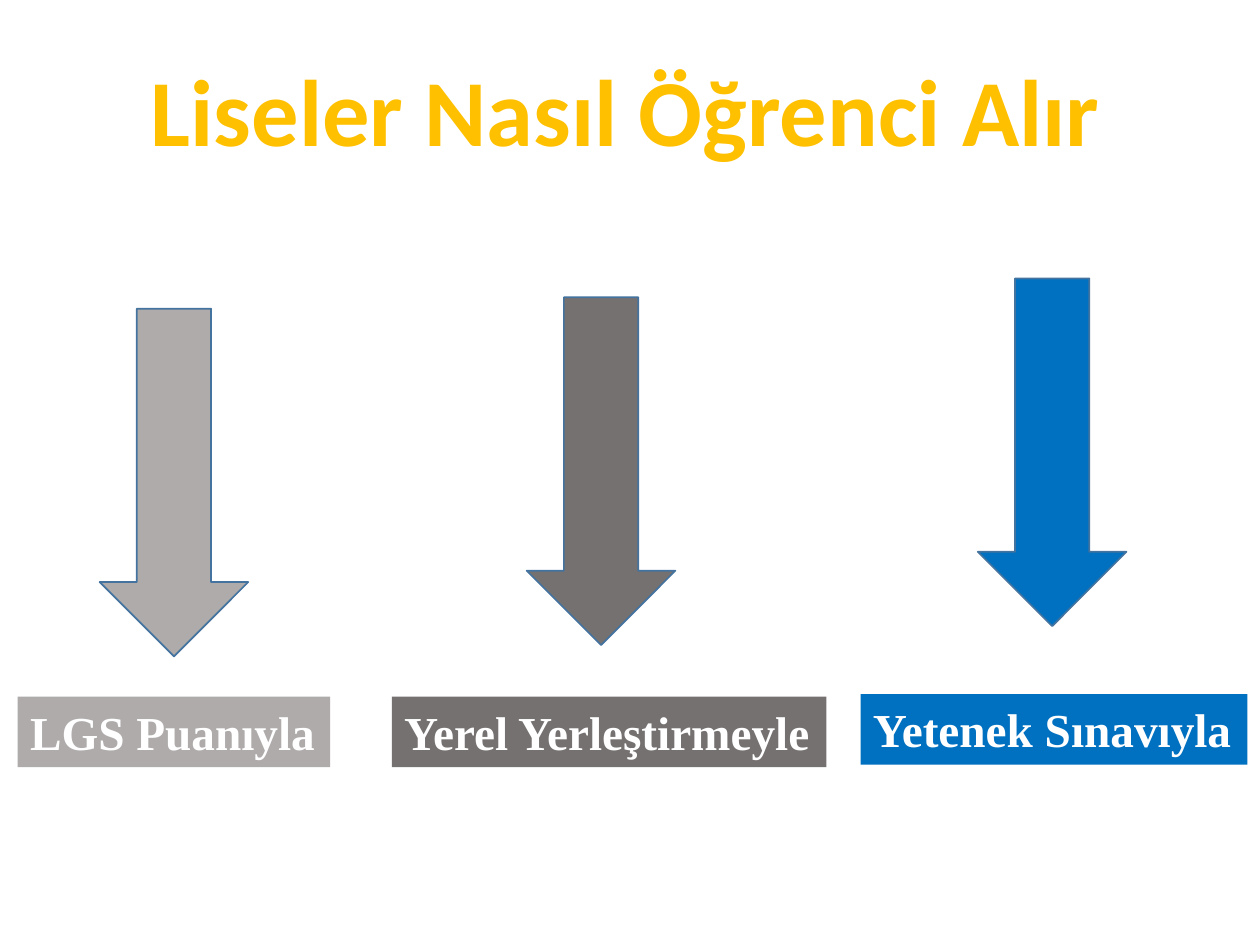
from pptx import Presentation
from pptx.dml.color import RGBColor
from pptx.enum.shapes import MSO_SHAPE as Shape
from pptx.enum.text import MSO_ANCHOR as Anchor, MSO_AUTO_SIZE as AutoSize, PP_ALIGN as Align
from pptx.util import Inches, Pt

TITLE = "Liseler Nasıl Öğrenci Alır"
ROUTES = [
    {"label": "LGS Puanıyla", "color": "light",
     "arrow": (0, 3.24), "box": (0.14, 5.53, 2.48)},
    {"label": "Yerel Yerleştirmeyle", "color": "dark",
     "arrow": (3.39, 3.15), "box": (3.11, 5.53, 3.45)},
    {"label": "Yetenek Sınavıyla", "color": "blue",
     "arrow": (6.97, 3), "box": (6.83, 5.51, 3.07)},
]
ARROW_SIZE = (2.76, 1.18)
BOX_HEIGHT = 0.56
THEME = {
    "title": "FFC000", "light": "AFABAB", "dark": "767171", "blue": "0070C0",
    "outline": "43739E", "label": "FFFFFF",
    "title_font": "Calibri", "label_font": "Times New Roman",
    "title_size": 54, "label_size": 27,
}


def color(name):
    return RGBColor.from_string(THEME[name])


def write(frame, text, role, align):
    frame.text = text
    para = frame.paragraphs[0]
    para.alignment = align
    font = para.runs[0].font
    font.name = THEME[role + "_font"]
    font.size = Pt(THEME[role + "_size"])
    font.bold = True
    font.color.rgb = color(role)
    return para


def add_title(page):
    title = page.shapes.title
    title.left, title.top, title.width, title.height = map(Inches, (0.34, 0.36, 9.13, 1.65))
    frame = title.text_frame
    frame.word_wrap = True
    frame.auto_size = AutoSize.NONE
    frame.vertical_anchor = Anchor.TOP
    para = write(frame, TITLE, "title", Align.CENTER)
    para.space_before = Pt(4)
    properties = para._p.get_or_add_pPr()
    properties.set("marL", str(Inches(0.12)))
    properties.set("indent", "0")


def add_filled(page, kind, bounds, fill):
    shape = page.shapes.add_shape(kind, *map(Inches, bounds))
    shape.shadow.inherit = False
    shape.fill.solid()
    shape.fill.fore_color.rgb = color(fill)
    return shape


def add_arrow(page, route):
    arrow = add_filled(page, Shape.RIGHT_ARROW, (*route["arrow"], *ARROW_SIZE), route["color"])
    arrow.rotation = 90
    arrow.line.color.rgb = color("outline")
    arrow.line.width = Pt(1)


def add_label(page, route):
    box = add_filled(page, Shape.RECTANGLE, (*route["box"], BOX_HEIGHT), route["color"])
    box.line.fill.background()
    frame = box.text_frame
    frame.word_wrap = False
    frame.auto_size = AutoSize.SHAPE_TO_FIT_TEXT
    frame.vertical_anchor = Anchor.TOP
    write(frame, route["label"], "label", Align.LEFT)


def main():
    deck = Presentation()
    deck.slide_width, deck.slide_height = Inches(10), Inches(7.5)
    page = deck.slides.add_slide(deck.slide_layouts[5])
    add_title(page)
    for add_part in (add_arrow, add_label):
        for route in ROUTES:
            add_part(page, route)
    deck.save("out.pptx")


if __name__ == "__main__":
    main()
